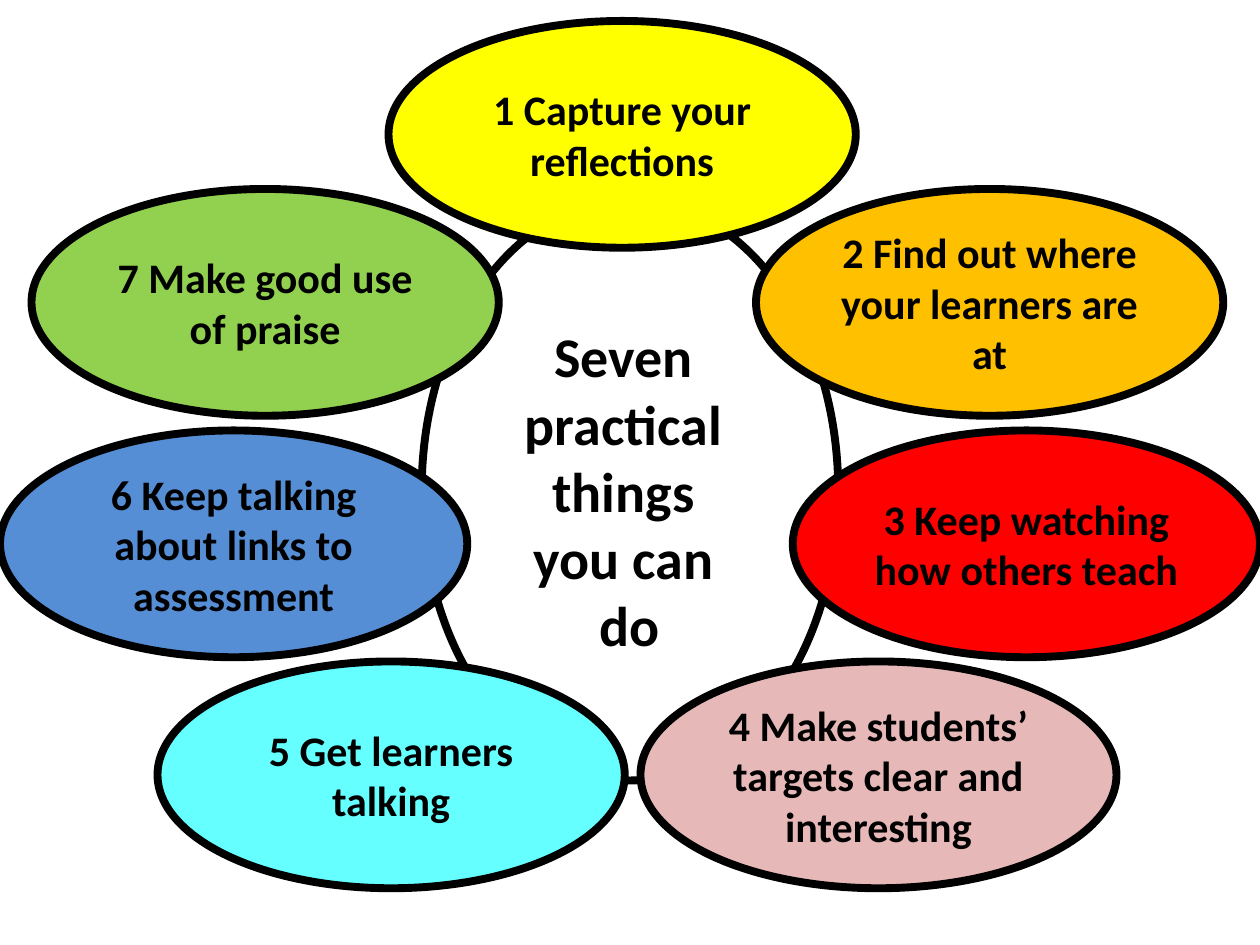
from dataclasses import dataclass

from pptx import Presentation
from pptx.dml.color import RGBColor as Rgb
from pptx.enum.shapes import MSO_SHAPE as Shape
from pptx.enum.text import MSO_ANCHOR as Anchor, PP_ALIGN as Align
from pptx.util import Pt


@dataclass(frozen=True)
class Theme:
    font: str = "Calibri"
    ink: str = "000000"
    line: float = 4.5
    hub: int = 32
    tip: int = 24
    yellow: str = "FFFF00"
    orange: str = "FFC000"
    red: str = "FF0000"
    pink: str = "E6B9B8"
    cyan: str = "66FFFF"
    blue: str = "558ED5"
    green: str = "92D050"


class Deck:
    def __init__(self, theme):
        self.theme = theme
        self.file = Presentation()
        self.file.slide_width, self.file.slide_height = Pt(720), Pt(540)
        self.slide = self.file.slides.add_slide(self.file.slide_layouts[6])

    def oval(self, box, text, size, fill=None):
        """Add an outlined ellipse with centred bold text; no fill leaves it clear."""
        theme = self.theme
        oval = self.slide.shapes.add_shape(Shape.OVAL, *map(Pt, box))
        oval.shadow.inherit = False
        if fill:
            oval.fill.solid()
            oval.fill.fore_color.rgb = Rgb.from_string(fill)
        else:
            oval.fill.background()
        oval.line.color.rgb = Rgb.from_string(theme.ink)
        oval.line.width = Pt(theme.line)
        frame = oval.text_frame
        frame.word_wrap = True
        frame.vertical_anchor = Anchor.MIDDLE
        frame.text = text
        for para in frame.paragraphs:
            para.alignment = Align.CENTER
            font = para.font
            font.name, font.size, font.bold = theme.font, Pt(size), True
            font.color.rgb = Rgb.from_string(theme.ink)
        return frame

    def hub(self, box, text):
        self.oval(box, text, self.theme.hub)

    def tip(self, box, text, fill):
        frame = self.oval(box, text, self.theme.tip, fill)
        frame.margin_left = frame.margin_right = 0
        frame.margin_top = frame.margin_bottom = 0


def main():
    theme = Theme()
    deck = Deck(theme)
    deck.hub((241, 114, 238, 332), "Seven \npractical \nthings \nyou can \ndo")

    wide, broad, high = 267, 272, 129.6
    top, upper, lower, base = 12, 108, 246, 378
    tips = [
        (222, top, wide, theme.yellow, "Capture your reflections"),
        (432, upper, wide, theme.orange, "Find out where your learners are at"),
        (453, lower, wide, theme.red, "Keep watching how others teach"),
        (366, base, broad, theme.pink,
         "Make students’ targets clear and interesting"),
        (90, base, wide, theme.cyan, "Get learners talking"),
        (0, lower, wide, theme.blue, "Keep talking about links to assessment"),
        (18, upper, wide, theme.green, "Make good use of praise"),
    ]
    for rank, (left, y, width, fill, text) in enumerate(tips, 1):
        deck.tip((left, y, width, high), f"{rank} {text}", fill)

    deck.file.save("out.pptx")


if __name__ == "__main__":
    main()
